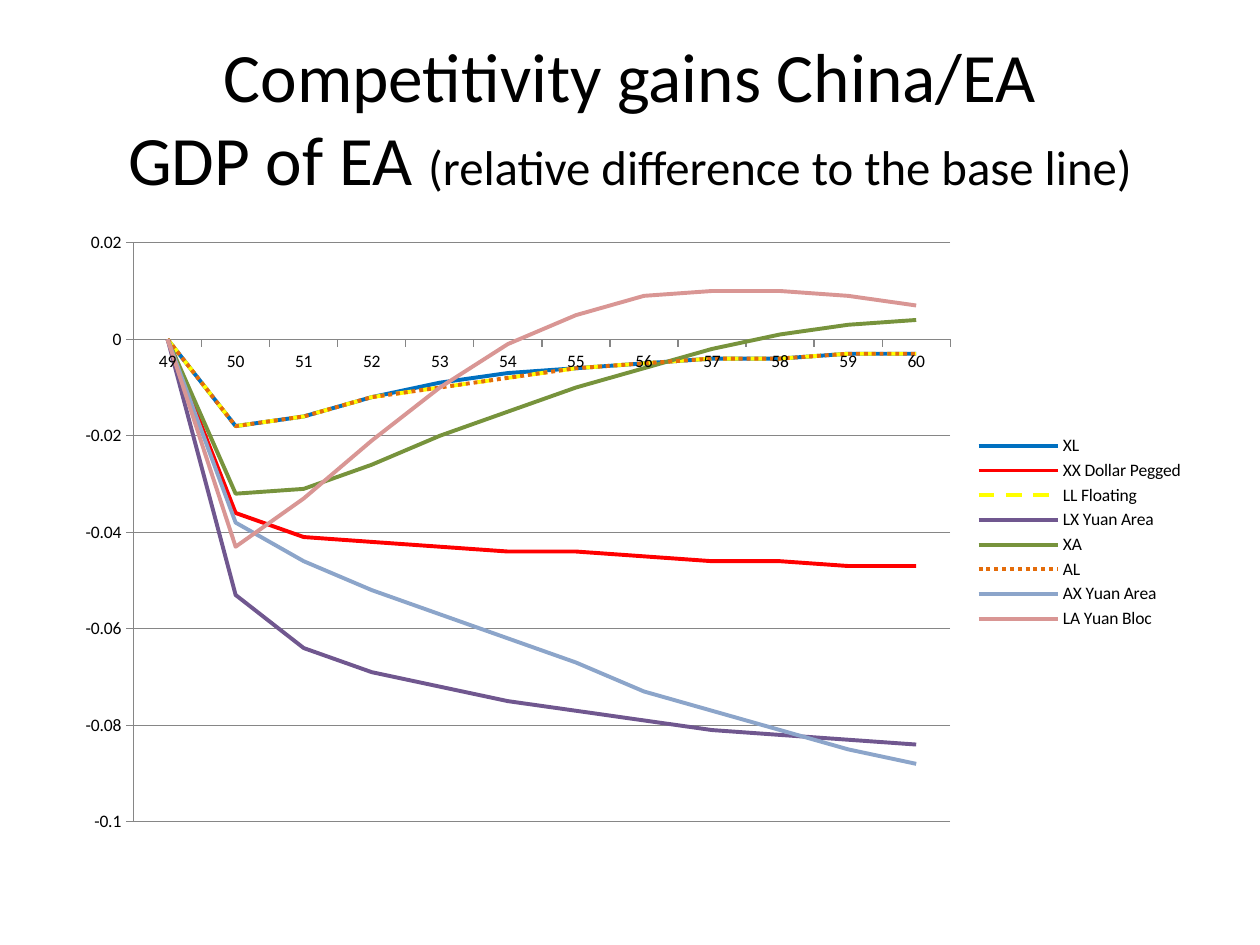
from pptx import Presentation, util as u
from pptx.chart.data import CategoryChartData
from pptx.dml.color import RGBColor
from pptx.enum import chart as ch, dml, text

BLACK = RGBColor(0, 0, 0)
GRAY = RGBColor(0x86, 0x86, 0x86)
BLUE = RGBColor(0x00, 0x70, 0xC0)
RED = RGBColor(0xFF, 0x00, 0x00)
YELLOW = RGBColor(0xFF, 0xFF, 0x00)
PURPLE = RGBColor(0x70, 0x57, 0x8F)
GREEN = RGBColor(0x77, 0x93, 0x3C)
ORANGE = RGBColor(0xE4, 0x6C, 0x0A)
PALE_BLUE = RGBColor(0x8C, 0xA5, 0xCA)
PINK = RGBColor(0xD9, 0x96, 0x94)
FONT = "Calibri"
SOLID = dml.MSO_LINE.SOLID
DASH = dml.MSO_LINE.DASH
DOT = dml.MSO_LINE.ROUND_DOT  # written as sysDot

# GDP difference to the base line, in thousandths, by period
PERIODS = range(49, 61)
FLOATING = [0, -18, -16, -12, -10, -8, -6, -5, -4, -4, -3, -3]
REGIMES = [
    ("XL", BLUE, SOLID, [0, -18, -16, -12, -9, -7, -6, -5, -4, -4, -3, -3]),
    ("XX Dollar Pegged", RED, SOLID, [0, -36, -41, -42, -43, -44, -44, -45, -46, -46, -47, -47]),
    ("LL Floating", YELLOW, DASH, FLOATING),
    ("LX Yuan Area", PURPLE, SOLID, [0, -53, -64, -69, -72, -75, -77, -79, -81, -82, -83, -84]),
    ("XA", GREEN, SOLID, [0, -32, -31, -26, -20, -15, -10, -6, -2, 1, 3, 4]),
    ("AL", ORANGE, DOT, FLOATING),
    ("AX Yuan Area", PALE_BLUE, SOLID, [0, -38, -46, -52, -57, -62, -67, -73, -77, -81, -85, -88]),
    ("LA Yuan Bloc", PINK, SOLID, [0, -43, -33, -21, -10, -1, 5, 9, 10, 10, 9, 7]),
]

deck = Presentation()
deck.slide_width, deck.slide_height = u.Inches(10), u.Inches(7.5)
page = deck.slides.add_slide(deck.slide_layouts[6])
margin = int(deck.slide_width * 0.05)
content_width = deck.slide_width - 2 * margin

# Title
box = page.shapes.add_textbox(margin, int(deck.slide_height * 0.04),
                              content_width, u.Inches(1.25))
frame = box.text_frame
frame.word_wrap = True
frame.vertical_anchor = text.MSO_ANCHOR.MIDDLE
para = frame.paragraphs[0]
para.text = "Competitivity gains China/EA\vGDP of EA "
para.alignment = text.PP_ALIGN.CENTER
para.font.size = u.Pt(39.6)
para.add_run().text = "(relative difference to the base line)"
for span in para.runs:
    span.font.name = FONT
    span.font.size = u.Pt(39.6)
    span.font.color.rgb = BLACK
para.runs[-1].font.size = u.Pt(27.9)

# Line chart
chart_data = CategoryChartData()
chart_data.categories = [str(period) for period in PERIODS]
for name, color, dash, values in REGIMES:
    chart_data.add_series(name, [value / 1000 for value in values])
chart = page.shapes.add_chart(ch.XL_CHART_TYPE.LINE, margin, u.Inches(1.75),
                              content_width, u.Inches(4.95), chart_data).chart
chart.has_title = False
chart.font.name = FONT
chart.font.size = u.Pt(10)
chart.font.color.rgb = BLACK
chart.plots[0].vary_by_categories = False

for series, (name, color, dash, values) in zip(chart.plots[0].series, REGIMES):
    series.smooth = False
    series.marker.style = ch.XL_MARKER_STYLE.NONE
    line = series.format.line
    line.color.rgb = color
    line.width = u.Pt(2.25)
    line.dash_style = dash

# Axes and legend
value_axis = chart.value_axis
value_axis.minimum_scale, value_axis.maximum_scale = -0.1, 0.02
value_axis.major_unit = 0.02
value_axis.has_major_gridlines = True
value_axis.major_gridlines.format.line.color.rgb = GRAY
value_axis.tick_labels.number_format = "General"
value_axis.tick_labels.number_format_is_linked = False
for axis in (chart.category_axis, value_axis):
    axis.major_tick_mark = ch.XL_TICK_MARK.OUTSIDE
    axis.format.line.color.rgb = GRAY

chart.has_legend = True
chart.legend.position = ch.XL_LEGEND_POSITION.RIGHT
chart.legend.include_in_layout = False

deck.save("out.pptx")
